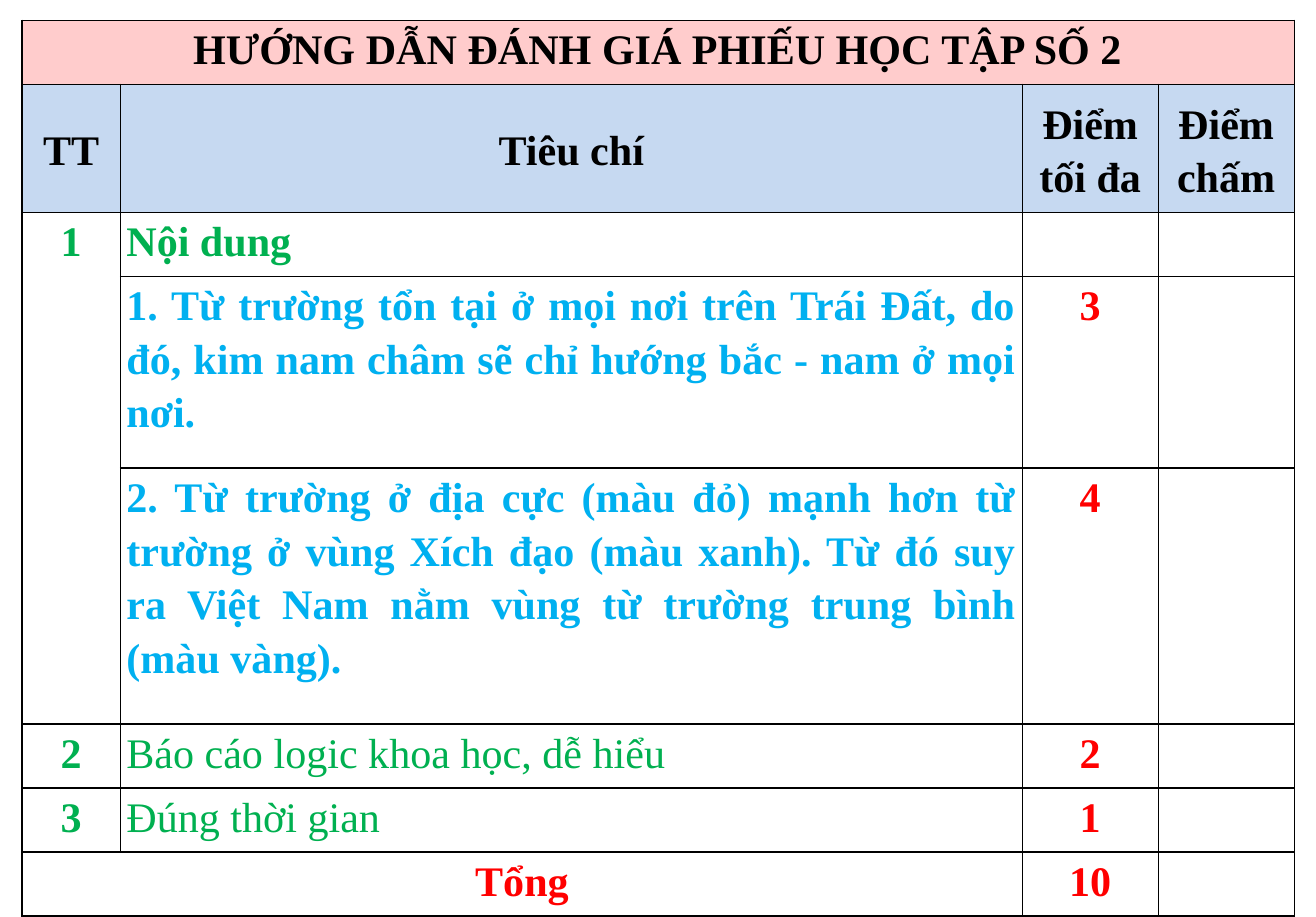
from lxml import etree
from pptx import Presentation
from pptx.dml.color import RGBColor
from pptx.enum.text import MSO_ANCHOR, PP_ALIGN
from pptx.util import Pt

CENTER, JUSTIFY = PP_ALIGN.CENTER, PP_ALIGN.JUSTIFY
TOP, MIDDLE = MSO_ANCHOR.TOP, MSO_ANCHOR.MIDDLE
NS = "http://schemas.openxmlformats.org/drawingml/2006/main"

# Content
FONT, SIZE = "Times New Roman", 26
BLACK, GREEN, BLUE, RED = "000000", "00B050", "00B0F0", "FF0000"
PINK, PALE = "FFCCCC", "C6D9F1"
ROWS = [
    ["HƯỚNG DẪN ĐÁNH GIÁ PHIẾU HỌC TẬP SỐ 2", "", "", ""],
    ["TT", "Tiêu chí", "Điểm tối đa", "Điểm chấm"],
    ["1", "Nội dung", "", ""],
    ["", "1. Từ trường tổn tại ở mọi nơi trên Trái Đất, do đó, "
         "kim nam châm sẽ chỉ hướng bắc - nam ở mọi nơi.", "3", ""],
    ["", "2. Từ trường ở địa cực (màu đỏ) mạnh hơn từ trường ở vùng "
         "Xích đạo (màu xanh). Từ đó suy ra Việt Nam nằm vùng từ trường "
         "trung bình (màu vàng).", "4", ""],
    ["2", "Báo cáo logic khoa học, dễ hiểu", "2", ""],
    ["3", "Đúng thời gian", "1", ""],
    ["Tổng", "", "10", ""],
]
HEAD, LAST = 1, len(ROWS) - 1
POINTS = (3, 4)   # criteria in blue
PLAIN = (5, 6)    # criteria not in bold
MERGES = [((0, 0), (0, 3)), ((2, 0), (4, 0)), ((LAST, 0), (LAST, 1))]

# Layout
LEFT, UP = 13.5, 12.5
COLS = [61, 557, 84, 84]
UNIT = 39.55
LINES = [1, 2, 1, 3, 4, 1, 1, 1]


def color(code):
    return RGBColor.from_string(code)


def ink(row, col):
    if row <= HEAD:
        return BLACK
    if row == LAST or col >= 2:
        return RED
    return BLUE if col == 1 and row in POINTS else GREEN


def border(cell):
    props = cell._tc.get_or_add_tcPr()
    for pos, side in enumerate(("lnL", "lnR", "lnT", "lnB")):
        line = etree.Element(f"{{{NS}}}{side}", w=str(Pt(1)))
        fill = etree.SubElement(line, f"{{{NS}}}solidFill")
        etree.SubElement(fill, f"{{{NS}}}srgbClr", val=BLACK)
        props.insert(pos, line)


def style(cell, row, col):
    cell.margin_left = cell.margin_right = Pt(3.6)
    cell.margin_top = cell.margin_bottom = 0
    cell.vertical_anchor = MIDDLE if row == HEAD else TOP
    if row <= HEAD:
        cell.fill.solid()
        cell.fill.fore_color.rgb = color(PALE if row else PINK)
    else:
        cell.fill.background()
    border(cell)
    body = col == 1 and HEAD < row < LAST
    para = cell.text_frame.paragraphs[0]
    para.alignment = JUSTIFY if body else CENTER
    para.line_spacing = 1.15
    for run in para.runs:
        run.font.name, run.font.size = FONT, Pt(SIZE)
        run.font.bold = not (body and row in PLAIN)
        run.font.color.rgb = color(ink(row, col))


# Slide
deck = Presentation()
deck.slide_width, deck.slide_height = Pt(812.88), Pt(566.64)
slide = deck.slides.add_slide(deck.slide_layouts[6])

# Table
table = slide.shapes.add_table(
    len(ROWS), len(COLS), Pt(LEFT), Pt(UP),
    Pt(sum(COLS)), Pt(UNIT * sum(LINES))).table
table.first_row = table.horz_banding = False
for col, width in zip(table.columns, COLS):
    col.width = Pt(width)
for row, count in zip(table.rows, LINES):
    row.height = Pt(UNIT * count)
for r, texts in enumerate(ROWS):
    for c, text in enumerate(texts):
        cell = table.cell(r, c)
        if text:
            cell.text_frame.text = text
        style(cell, r, c)
for start, end in MERGES:
    table.cell(*start).merge(table.cell(*end))

deck.save("out.pptx")
